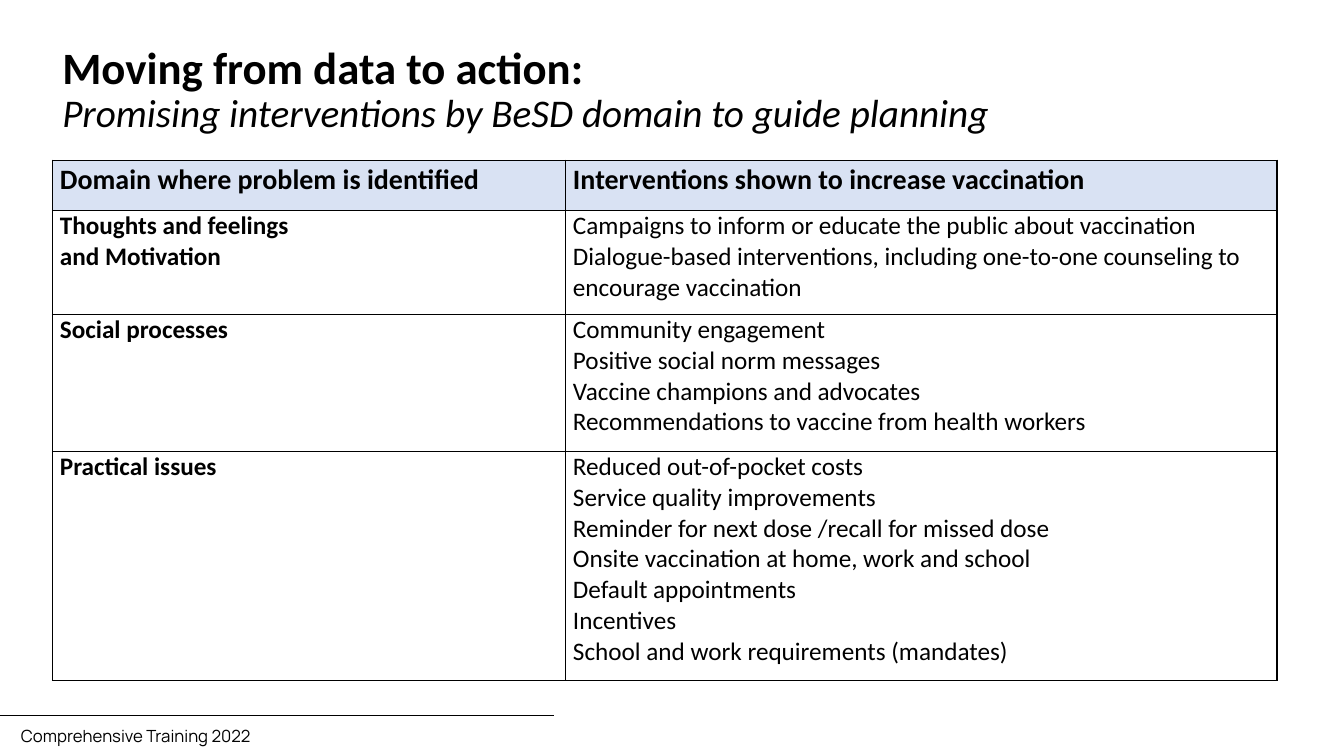
import pptx
import pptx.dml.color
import pptx.enum.shapes
import pptx.enum.text
import pptx.oxml
import pptx.oxml.ns
import pptx.util
from pptx.util import Cm

BLACK = pptx.dml.color.RGBColor(0x00, 0x00, 0x00)
HEADER_BLUE = pptx.dml.color.RGBColor(0xD9, 0xE2, 0xF3)

HEADINGS = ["Domain where problem is identified", "Interventions shown to increase vaccination"]
DOMAINS = [
    (["Thoughts and feelings", "and Motivation"],
     ["Campaigns to inform or educate the public about vaccination",
      "Dialogue-based interventions, including one-to-one counseling to encourage vaccination"]),
    (["Social processes"],
     ["Community engagement",
      "Positive social norm messages",
      "Vaccine champions and advocates",
      "Recommendations to vaccine from health workers"]),
    (["Practical issues"],
     ["Reduced out-of-pocket costs",
      "Service quality improvements",
      "Reminder for next dose /recall for missed dose",
      "Onsite vaccination at home, work and school",
      "Default appointments",
      "Incentives",
      "School and work requirements (mandates)"]),
]


class SlideBuilder:
    """Draw styled text, lines and tables on one slide."""

    font_name = "Calibri"
    text_color = BLACK
    border_width = pptx.util.Pt(1)

    def __init__(self, slide):
        self.slide = slide

    def style_text(self, paragraph, text, size, bold=False, italic=False, spacing=1.0, font_name=None):
        paragraph.text = text
        paragraph.line_spacing = spacing
        font = paragraph.font
        font.name = font_name or self.font_name
        font.size = pptx.util.Pt(size)
        font.bold = bold
        font.italic = italic
        font.color.rgb = self.text_color

    def text_box(self, left, top, width, height, lines):
        frame = self.slide.shapes.add_textbox(Cm(left), Cm(top), Cm(width), Cm(height)).text_frame
        frame.word_wrap = True
        for index, (text, style) in enumerate(lines):
            paragraph = frame.add_paragraph() if index else frame.paragraphs[0]
            self.style_text(paragraph, text, **style)

    def rule(self, left, right, y, width):
        line = self.slide.shapes.add_connector(
            pptx.enum.shapes.MSO_CONNECTOR.STRAIGHT, Cm(left), Cm(y), Cm(right), Cm(y))
        line.line.color.rgb = self.text_color
        line.line.width = pptx.util.Pt(width)
        properties = line._element.spPr
        properties.append(pptx.oxml.parse_xml(
            f"<a:effectLst {pptx.oxml.ns.nsdecls('a')}/>"))

    def border(self, cell):
        properties = cell._tc.get_or_add_tcPr()
        for side in ("lnL", "lnR", "lnT", "lnB"):
            properties.append(pptx.oxml.parse_xml(
                f"<a:{side} {pptx.oxml.ns.nsdecls('a')} w='{self.border_width}'>"
                f"<a:solidFill><a:srgbClr val='{self.text_color}'/></a:solidFill></a:{side}>"))

    def cell(self, cell, lines, fill=None, **style):
        self.border(cell)
        cell.margin_left = cell.margin_right = Cm(0.19)
        cell.margin_top = cell.margin_bottom = 0
        cell.vertical_anchor = pptx.enum.text.MSO_ANCHOR.TOP
        if fill is None:
            cell.fill.background()
        else:
            cell.fill.solid()
            cell.fill.fore_color.rgb = fill
        frame = cell.text_frame
        for index, text in enumerate(lines):
            paragraph = frame.add_paragraph() if index else frame.paragraphs[0]
            self.style_text(paragraph, text, **style)

    def table(self, left, top, widths, heights, headings, rows):
        table = self.slide.shapes.add_table(
            len(heights), len(widths), Cm(left), Cm(top), Cm(sum(widths)), Cm(sum(heights))).table
        table.horz_banding = False
        for column, width in zip(table.columns, widths):
            column.width = Cm(width)
        for row, height in zip(table.rows, heights):
            row.height = Cm(height)
        for column, heading in enumerate(headings):
            self.cell(table.cell(0, column), [heading], HEADER_BLUE, size=20, bold=True, spacing=1.07)
        for row, contents in enumerate(rows, start=1):
            for column, lines in enumerate(contents):
                self.cell(table.cell(row, column), lines, size=18, bold=column == 0)


def main():
    presentation = pptx.Presentation()
    presentation.slide_width = Cm(33.87)
    presentation.slide_height = Cm(19.05)
    builder = SlideBuilder(presentation.slides.add_slide(presentation.slide_layouts[6]))

    builder.text_box(0.28, 18.16, 11.15, 0.76, [
        ("Comprehensive Training 2022", {"size": 12, "font_name": "Manrope"})])
    builder.rule(-0.15, 13.97, 18.03, 0.5)
    builder.text_box(1.32, 1.02, 31.7, 2.16, [
        ("Moving from data to action:", {"size": 32, "bold": True, "spacing": 0.9}),
        ("Promising interventions by BeSD domain to guide planning",
         {"size": 28, "italic": True, "spacing": 0.9})])
    builder.table(1.32, 4.04, [12.93, 17.93], [1.27, 2.62, 3.45, 5.77], HEADINGS, DOMAINS)
    presentation.save("out.pptx")


if __name__ == "__main__":
    main()
